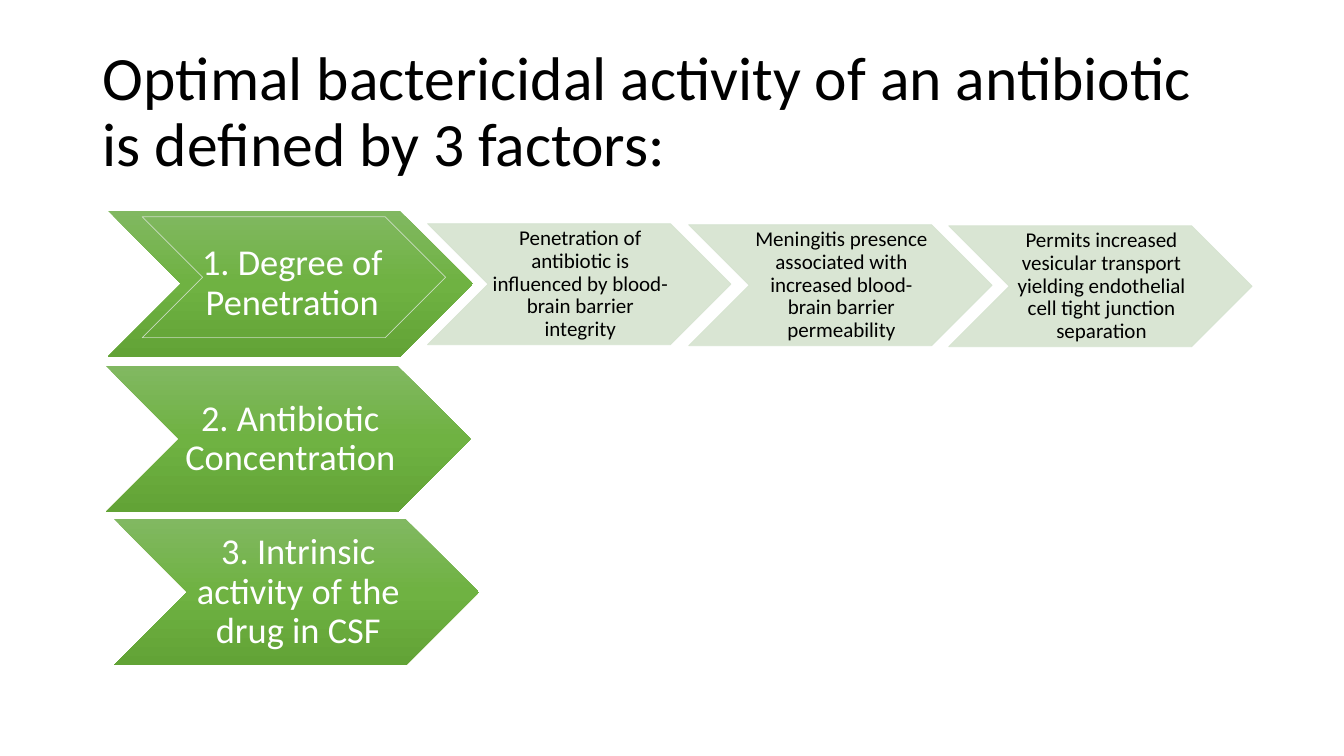
from copy import deepcopy
from dataclasses import dataclass

from lxml import etree
from pptx import Presentation
from pptx import util as u
from pptx.dml.color import RGBColor
from pptx.enum import shapes, text
from pptx.oxml.ns import qn

BLACK = RGBColor(0x00, 0x00, 0x00)
WHITE = RGBColor(0xFF, 0xFF, 0xFF)
PALE_GREEN = RGBColor(0xD5, 0xE3, 0xCF)
GREENS = (
    RGBColor(0x81, 0xB8, 0x61),
    RGBColor(0x6F, 0xB2, 0x42),
    RGBColor(0x62, 0xA3, 0x36),
)
FONT = "Calibri"


@dataclass(frozen=True)
class Style:
    width: float
    height: float
    size: int
    color: RGBColor
    inset_left: float
    inset_top: float


@dataclass(frozen=True)
class Chevron:
    left: float
    top: float
    style: Style
    words: str = ""


FACTOR = Style(3.62, 1.45, 26, WHITE, 0.04, 0.02)
DETAIL = Style(3.01, 1.2, 15, BLACK, 0.02, 0.01)

CHEVRONS = (
    Chevron(1.07, 2.09, FACTOR, "1. Degree of Penetration"),
    Chevron(4.24, 2.22, DETAIL,
            "Penetration of antibiotic is influenced by blood-brain barrier integrity"),
    Chevron(6.83, 2.23, DETAIL,
            "Meningitis presence associated with increased blood-brain barrier permeability"),
    Chevron(1.05, 3.63, FACTOR, "2. Antibiotic Concentration"),
    Chevron(1.41, 2.15, DETAIL),
    Chevron(9.41, 2.24, DETAIL,
            "Permits increased vesicular transport yielding endothelial cell tight junction separation"),
    Chevron(1.13, 5.15, FACTOR, "3. Intrinsic activity of the drug in CSF"),
)


def format_text(frame, size: int, color: RGBColor, align) -> None:
    frame.word_wrap = True
    frame.auto_size = text.MSO_AUTO_SIZE.NONE
    frame.vertical_anchor = text.MSO_ANCHOR.MIDDLE
    for paragraph in frame.paragraphs:
        paragraph.alignment = align
        paragraph.line_spacing = 0.9
        paragraph.space_before = u.Pt(0)
        for run in paragraph.runs:
            run.font.name = FONT
            run.font.size = u.Pt(size)
            run.font.color.rgb = color


def fill_gradient(shape) -> None:
    shape.fill.gradient()
    shape.fill.gradient_angle = 270
    stop_list = shape._element.spPr.find(".//" + qn("a:gsLst"))
    stop_list.insert(1, deepcopy(stop_list[0]))
    for stop, color, position in zip(shape.fill.gradient_stops, GREENS, (0, 0.5, 1)):
        stop.color.rgb = color
        stop.position = position


def draw_chevron(slide, chevron: Chevron) -> None:
    style = chevron.style
    shape = slide.shapes.add_shape(
        shapes.MSO_SHAPE.CHEVRON,
        u.Inches(chevron.left), u.Inches(chevron.top),
        u.Inches(style.width), u.Inches(style.height))
    shape.shadow.inherit = False
    if style is FACTOR:
        fill_gradient(shape)
        shape.line.fill.background()
    else:
        if chevron.words:
            shape.fill.solid()
            shape.fill.fore_color.rgb = PALE_GREEN
        else:
            shape.fill.background()
        shape.line.color.rgb = PALE_GREEN
        shape.line.width = u.Pt(0.5)
        for color in shape._element.spPr.iter(qn("a:srgbClr")):
            etree.SubElement(color, qn("a:alpha"), val="90000")
    if chevron.words:
        frame = shape.text_frame
        frame.text = chevron.words
        frame.margin_left = u.Inches(style.inset_left)
        frame.margin_right = 0
        frame.margin_top = frame.margin_bottom = u.Inches(style.inset_top)
        format_text(frame, style.size, style.color, text.PP_ALIGN.CENTER)


def main() -> None:
    deck = Presentation()
    deck.slide_width = u.Inches(13.33)
    deck.slide_height = u.Inches(7.5)
    slide = deck.slides.add_slide(deck.slide_layouts[5])

    title = slide.shapes.title
    title.left, title.top = u.Inches(0.92), u.Inches(0.4)
    title.width, title.height = u.Inches(11.5), u.Inches(1.45)
    title.text_frame.text = (
        "Optimal bactericidal activity of an antibiotic is defined by 3 factors:")
    format_text(title.text_frame, 44, BLACK, text.PP_ALIGN.LEFT)

    for chevron in CHEVRONS:
        draw_chevron(slide, chevron)

    deck.save("out.pptx")


if __name__ == "__main__":
    main()
